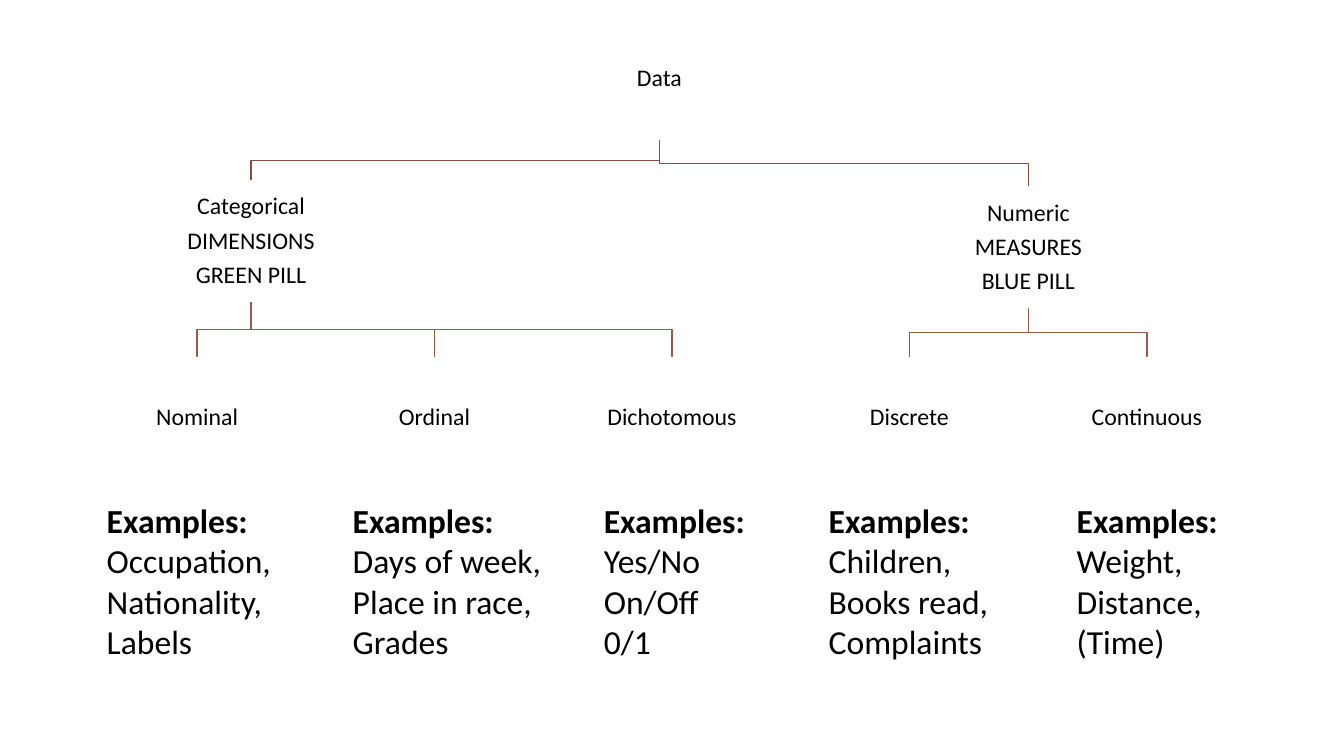
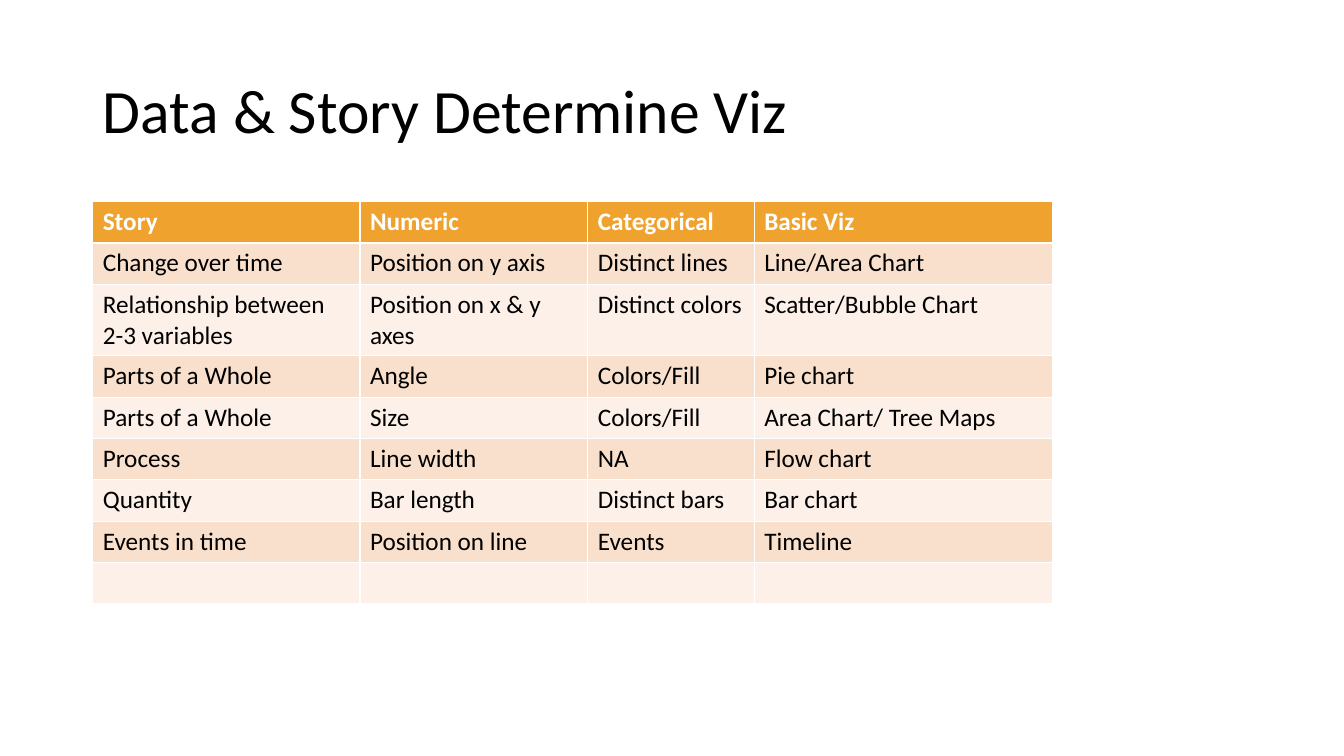
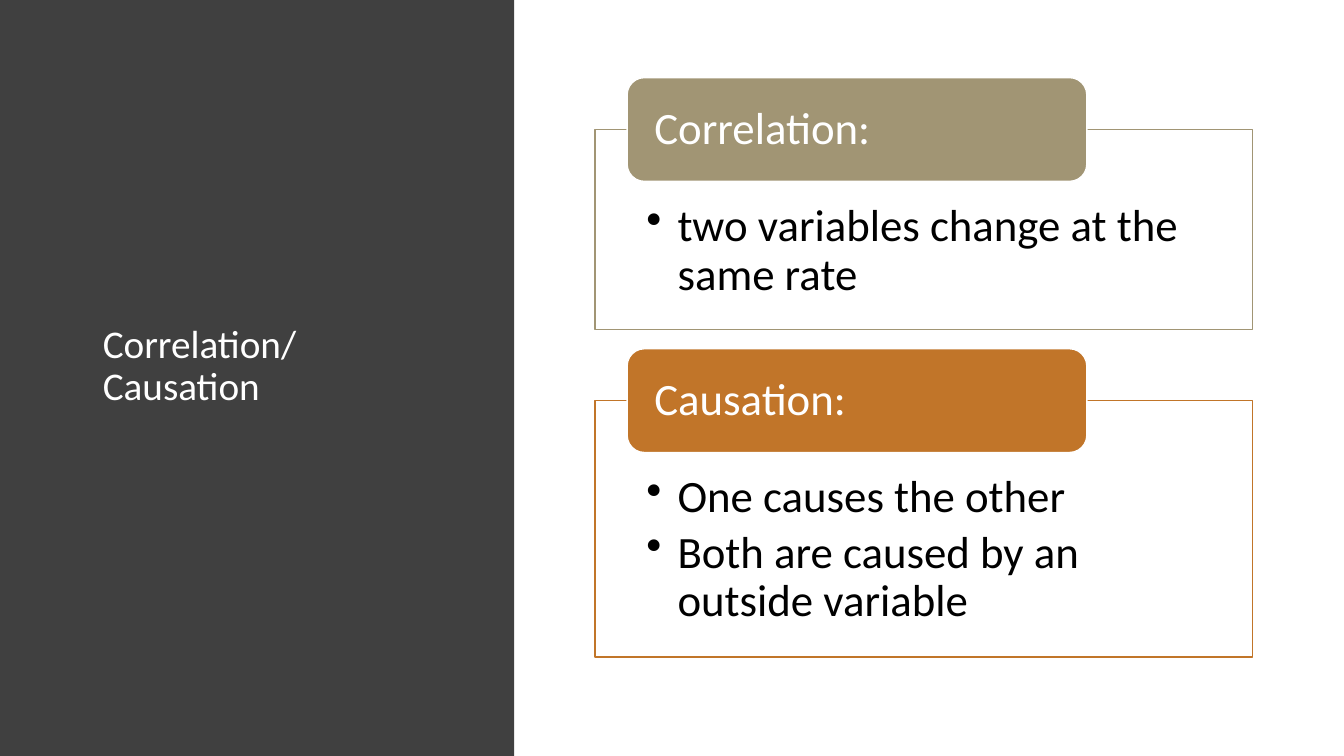
from lxml import etree
from pptx import Presentation
from pptx.dml.color import RGBColor
from pptx.enum.shapes import MSO_SHAPE as SHAPE
from pptx.enum.text import MSO_ANCHOR as ANCHOR, MSO_AUTO_SIZE as AUTO, PP_ALIGN as ALIGN
from pptx.oxml.ns import qn
from pptx.util import Inches, Pt

FONT = "Calibri"
BLACK, WHITE = "000000", "FFFFFF"
GOLD, PEACH, CREAM = "F0A22E", "F9E0CD", "FCF0E8"
TRUNK, BRANCH = "84503E", "965B47"
CHARCOAL, OLIVE, ORANGE = "404040", "A19574", "C17529"

NODE_W, NODE_H = 1.81, 1.21

DATA_TREE = [
    (2.49, 1.79, ["Categorical", "DIMENSIONS", "GREEN PILL"],
     ["Nominal", "Ordinal", "Dichotomous"]),
    (10.2, 1.85, ["Numeric", "MEASURES", "BLUE PILL"],
     ["Discrete", "Continuous"]),
]
EXAMPLES = [
    (0.96, 1.92, ["Occupation,", "Nationality,", "Labels"]),
    (3.4, 2.09, ["Days of week,", "Place in race,", "Grades"]),
    (5.89, 1.62, ["Yes/No", "On/Off", "0/1"]),
    (8.12, 1.82, ["Children,", "Books read,", "Complaints"]),
    (10.58, 1.62, ["Weight,", "Distance,", "(Time)"]),
]
VIZ_ROWS = [
    ["Story", "Numeric", "Categorical", "Basic Viz"],
    ["Change over time", "Position on y axis", "Distinct lines", "Line/Area Chart"],
    ["Relationship between 2-3 variables", "Position on x & y axes",
     "Distinct colors", "Scatter/Bubble Chart"],
    ["Parts of a Whole", "Angle", "Colors/Fill", "Pie chart"],
    ["Parts of a Whole", "Size", "Colors/Fill", "Area Chart/ Tree Maps"],
    ["Process", "Line width", "NA", "Flow chart"],
    ["Quantity", "Bar length", "Distinct bars", "Bar chart"],
    ["Events in time", "Position on line", "Events", "Timeline"],
    ["", "", "", ""],
]


def rgb(color):
    return RGBColor.from_string(color)


def box(x, y, w, h):
    return [Inches(v) for v in (x, y, w, h)]


def write(tf, lines, size, color=BLACK, bold_lines=0, align=ALIGN.LEFT,
          spacing=None, after=0, bullet=False):
    """Fill a text frame, one paragraph a line; the first bold_lines are bold."""
    for i, line in enumerate(lines):
        p = tf.add_paragraph() if i else tf.paragraphs[0]
        p.alignment, p.line_spacing, p.space_after = align, spacing, Pt(after)
        p.space_before = Pt(0)
        r = p.add_run()
        r.text = line
        r.font.name, r.font.size, r.font.bold = FONT, Pt(size), i < bold_lines
        r.font.color.rgb = rgb(color)
        if bullet:
            props = p._p.get_or_add_pPr()
            props.set("marL", str(Inches(0.31)))
            props.set("indent", str(-Inches(0.31)))
            etree.SubElement(props, qn("a:buChar")).set("char", "•")


def frame(tf, anchor, left, top, right, bottom):
    tf.word_wrap, tf.vertical_anchor = True, anchor
    tf.margin_left, tf.margin_top = Inches(left), Inches(top)
    tf.margin_right, tf.margin_bottom = Inches(right), Inches(bottom)


def add_block(s, kind, area, fill, line=None):
    sp = s.shapes.add_shape(kind, *box(*area))
    sp.shadow.inherit = False
    sp.fill.solid()
    sp.fill.fore_color.rgb = rgb(fill)
    if line:
        sp.line.color.rgb, sp.line.width = rgb(line), Pt(1)
    else:
        sp.line.fill.background()
    return sp


def set_title(s, text, area, size, color=BLACK):
    title = s.shapes.title
    title.left, title.top, title.width, title.height = box(*area)
    tf = title.text_frame
    frame(tf, ANCHOR.MIDDLE, 0.1, 0.05, 0.1, 0.05)
    tf.auto_size = AUTO.NONE
    write(tf, [text], size, color, spacing=0.9)


def add_node(s, center, top, lines):
    sp = add_block(s, SHAPE.ROUNDED_RECTANGLE,
                   (center - NODE_W / 2, top, NODE_W, NODE_H), WHITE)
    sp.adjustments[0] = 0.1
    frame(sp.text_frame, ANCHOR.MIDDLE, 0.1, 0.1, 0.1, 0.1)
    write(sp.text_frame, lines, 17, align=ALIGN.CENTER, spacing=0.9, after=6)


def add_elbow(s, x1, y1, x2, y2, color):
    """Draw a line down, across at half height, and down again."""
    middle = (y1 + y2) / 2
    points = [(Inches(x), Inches(y))
              for x, y in ((x1, y1), (x1, middle), (x2, middle), (x2, y2))]
    builder = s.shapes.build_freeform(*points[0])
    builder.add_line_segments(points[1:], close=False)
    sp = builder.convert_to_shape()
    sp.shadow.inherit = False
    sp.fill.background()
    sp.line.color.rgb, sp.line.width = rgb(color), Pt(1)


def add_tree(s, left, top, width):
    root_x, leaf_top = 6.54, top + 3.36
    leaf_count = sum(len(leaves) for *_, leaves in DATA_TREE)
    step = (width - NODE_W) / (leaf_count - 1)
    leaf_x = left + NODE_W / 2
    add_node(s, root_x, top, ["Data"])
    for x, y, lines, leaves in DATA_TREE:
        add_elbow(s, root_x, top + NODE_H, x, y, TRUNK)
        add_node(s, x, y, lines)
        for leaf in leaves:
            add_elbow(s, x, y + NODE_H, leaf_x, leaf_top, BRANCH)
            add_node(s, leaf_x, leaf_top, [leaf])
            leaf_x += step


def add_examples(s, top):
    for left, width, lines in EXAMPLES:
        tf = s.shapes.add_textbox(*box(left, top, width, 1.72)).text_frame
        tf.word_wrap, tf.auto_size = False, AUTO.SHAPE_TO_FIT_TEXT
        write(tf, ["Examples:"] + lines, 24, bold_lines=1)


def add_viz_table(s, left, top, widths, row_height):
    area = box(left, top, sum(widths), row_height * len(VIZ_ROWS))
    table = s.shapes.add_table(len(VIZ_ROWS), len(widths), *area).table
    for column, width in zip(table.columns, widths):
        column.width = Inches(width)
    for i, row in enumerate(VIZ_ROWS):
        table.rows[i].height = Inches(row_height)
        header = i == 0
        fill = GOLD if header else PEACH if i % 2 else CREAM
        for j, text in enumerate(row):
            cell = table.cell(i, j)
            cell.fill.solid()
            cell.fill.fore_color.rgb = rgb(fill)
            if text:
                write(cell.text_frame, [text], 18, WHITE if header else BLACK,
                      bold_lines=int(header))


def add_definition(s, left, top, height, heading, points, color):
    """Place an outlined list with a heading tab across its top edge."""
    tab_h = 1.03
    panel = add_block(s, SHAPE.RECTANGLE,
                      (left, top + tab_h / 2, 6.52, height - tab_h / 2), WHITE, color)
    frame(panel.text_frame, ANCHOR.TOP, 0.51, 0.73, 0.51, 0.25)
    write(panel.text_frame, points, 32, spacing=0.9, after=4.8, bullet=True)
    tab = add_block(s, SHAPE.ROUNDED_RECTANGLE, (left + 0.32, top, 4.56, tab_h),
                    color, WHITE)
    frame(tab.text_frame, ANCHOR.MIDDLE, 0.22, 0.05, 0.22, 0.05)
    write(tab.text_frame, [heading], 32, WHITE, spacing=0.9, after=11.2)


def data_types_slide(prs):
    s = prs.slides.add_slide(prs.slide_layouts[6])
    add_tree(s, 1.05, 0.18, 11.23)
    add_examples(s, 4.91)


def viz_slide(prs):
    s = prs.slides.add_slide(prs.slide_layouts[5])
    set_title(s, "Data & Story Determine Viz", (0.92, 0.4, 11.5, 1.45), 44)
    add_viz_table(s, 0.92, 2, [2.65, 2.26, 1.65, 2.96], 0.41)


def correlation_slide(prs):
    s = prs.slides.add_slide(prs.slide_layouts[5])
    band = add_block(s, SHAPE.RECTANGLE, (0, 0, 5.1, 7.5), CHARCOAL)
    s.shapes.title.element.addprevious(band.element)
    set_title(s, "Correlation/Causation", (0.92, 0.68, 3.67, 5.92), 28, WHITE)
    add_definition(s, 5.9, 0.77, 2.5, "Correlation:",
                   ["two variables change at the same rate"], OLIVE)
    add_definition(s, 5.9, 3.46, 3.06, "Causation:",
                   ["One causes the other", "Both are caused by an outside variable"],
                   ORANGE)


def main():
    prs = Presentation()
    prs.slide_width, prs.slide_height = Inches(13.33), Inches(7.5)
    data_types_slide(prs)
    viz_slide(prs)
    correlation_slide(prs)
    prs.save("out.pptx")


if __name__ == "__main__":
    main()
